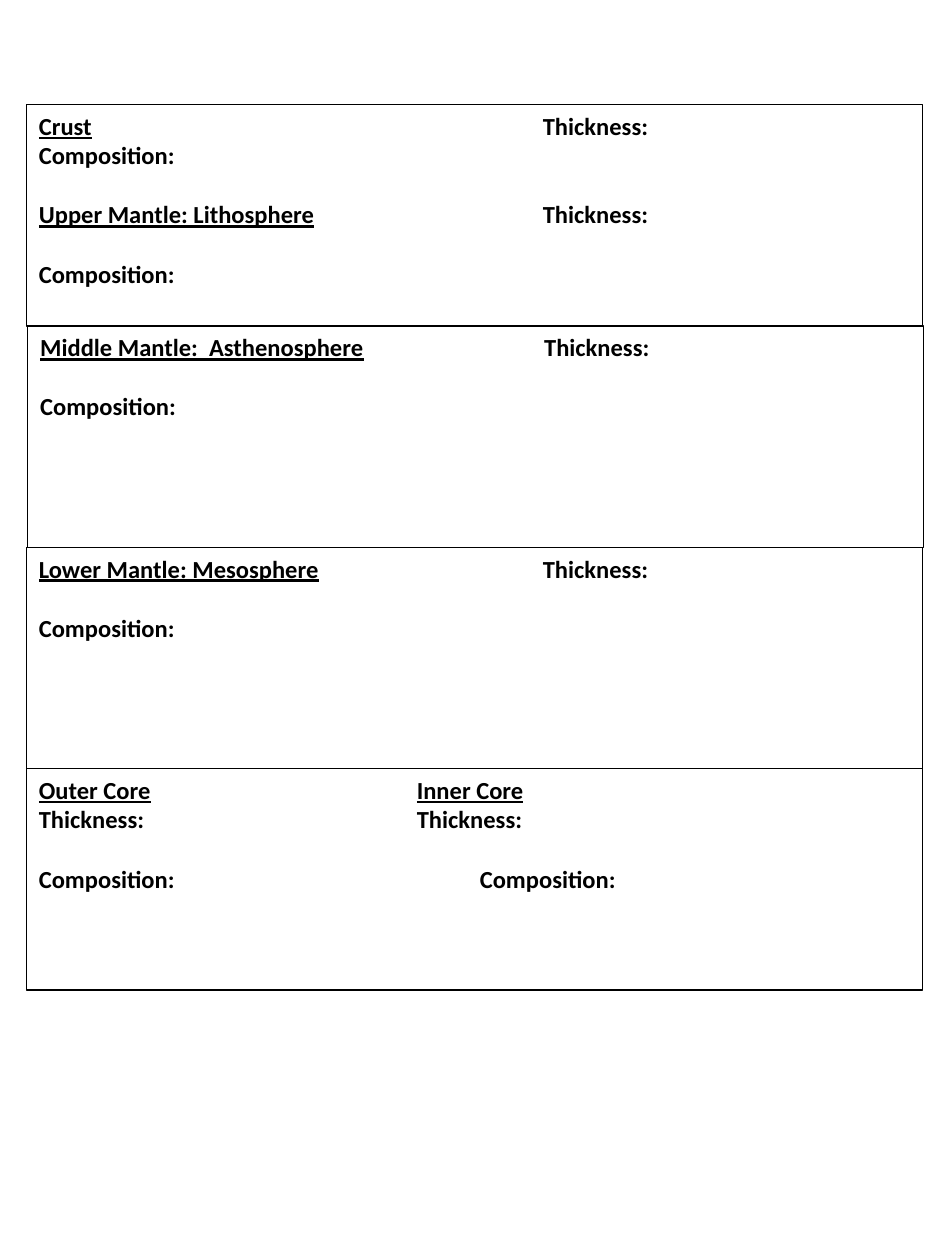
from lxml import etree
from pptx import Presentation
from pptx.dml.color import RGBColor
from pptx.enum import shapes, text
from pptx.oxml.ns import qn
from pptx.util import Inches, Pt

BLACK = RGBColor(0, 0, 0)
TOP, HEIGHT, WIDTH = 0.83, 1.757, 7.11
GAP = 17

# Each line: left text, right text, tab position, space before, underlined parts
LAYERS = [
    (0.21, [("Crust", "Thickness: ", 4, 0, (True, False)),
            ("Composition: ", "", 4, 0, (False, False)),
            ("Upper Mantle: Lithosphere", "Thickness: ", 4, GAP, (True, False)),
            ("Composition: ", "", 4, GAP, (False, False))]),
    (0.22, [("Middle Mantle:  Asthenosphere", "Thickness:  ", 4, 0, (True, False)),
            ("Composition: ", "", 4, GAP, (False, False))]),
    (0.21, [("Lower Mantle: Mesosphere", "Thickness: ", 4, 0, (True, False)),
            ("Composition: ", "", 4, GAP, (False, False))]),
    (0.21, [("Outer Core", "Inner Core", 3, 0, (True, True)),
            ("Thickness: ", "Thickness: ", 3, 0, (False, False)),
            ("Composition: ", "Composition: ", 3.5, GAP, (False, False))]),
]

prs = Presentation()
prs.slide_width, prs.slide_height = Inches(7.5), Inches(10)
s = prs.slides.add_slide(prs.slide_layouts[6])

for i, (left, lines) in enumerate(LAYERS):
    sp = s.shapes.add_shape(shapes.MSO_SHAPE.RECTANGLE, Inches(left),
                            Inches(TOP + i * HEIGHT), Inches(WIDTH), Inches(HEIGHT))
    sp.shadow.inherit = False
    sp.fill.background()
    sp.line.color.rgb = BLACK
    sp.line.width = Pt(0.75)
    tf = sp.text_frame
    tf.word_wrap = True
    tf.vertical_anchor = text.MSO_ANCHOR.TOP
    for j, (label, second, tab, before, underlines) in enumerate(lines):
        p = tf.paragraphs[0] if j == 0 else tf.add_paragraph()
        p.alignment = text.PP_ALIGN.LEFT
        p.space_before = Pt(before)
        if second:
            tabs = etree.SubElement(p._p.get_or_add_pPr(), qn("a:tabLst"))
            etree.SubElement(tabs, qn("a:tab"), pos=str(Inches(tab)), algn="l")
        parts = [(label, underlines[0])]
        if second:
            parts += [("\t", False), (second, underlines[1])]
        for words, underline in parts:
            r = p.add_run()
            r.text = words
            r.font.name = "Calibri"
            r.font.size = Pt(14)
            r.font.bold = True
            r.font.underline = underline
            r.font.color.rgb = BLACK

prs.save("out.pptx")
